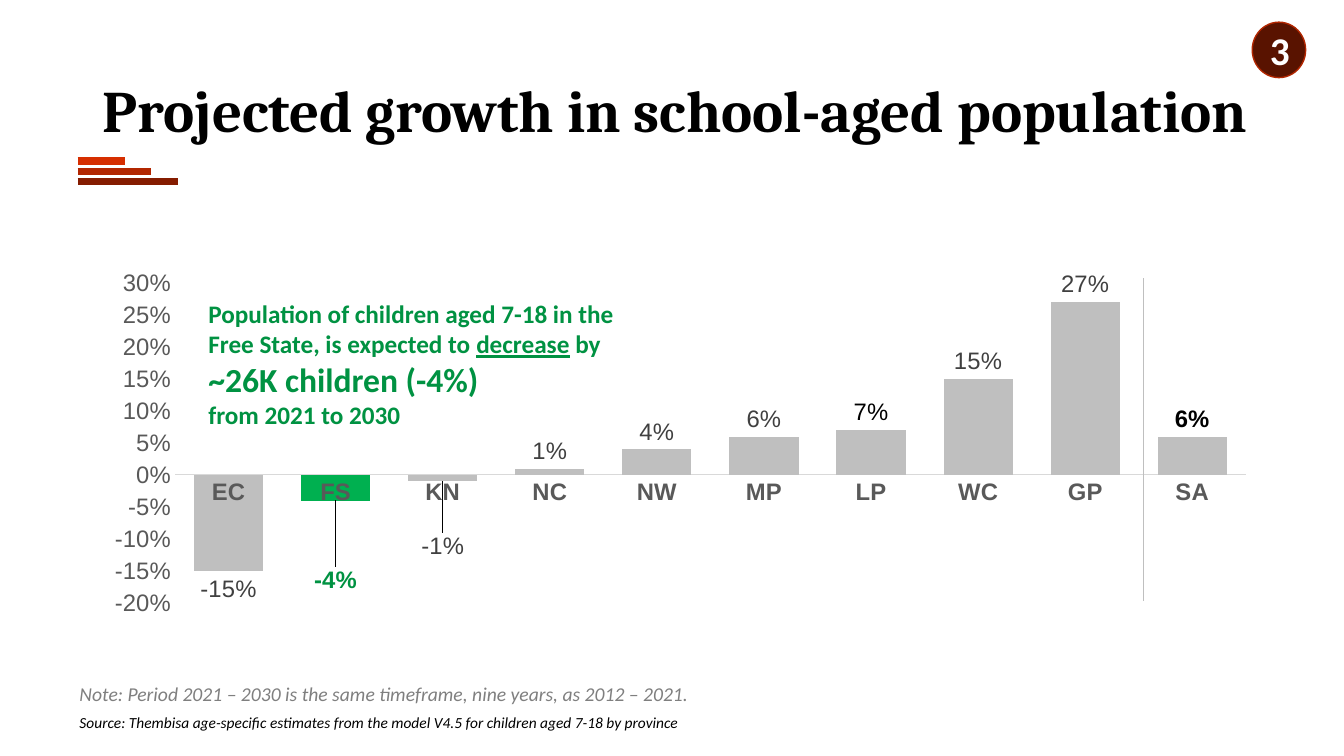
from lxml import etree
from pptx import Presentation, util as u
from pptx.chart.data import CategoryChartData
from pptx.dml.color import RGBColor
from pptx.enum import chart as ch, shapes, text
from pptx.oxml import parse_xml
from pptx.oxml.ns import nsdecls, qn

PX = 9144
WHITE = RGBColor(0xFF, 0xFF, 0xFF)
BLACK = RGBColor(0x00, 0x00, 0x00)
DARK_RED = RGBColor(0x85, 0x1C, 0x00)
RED = RGBColor(0xB2, 0x26, 0x00)
BRIGHT_RED = RGBColor(0xD6, 0x2E, 0x00)
BADGE_RED = RGBColor(0x59, 0x13, 0x00)
GREEN = RGBColor(0x00, 0xB0, 0x50)
TEXT_GREEN = RGBColor(0x00, 0x92, 0x42)
BAR_GREY = RGBColor(0xBF, 0xBF, 0xBF)
AXIS_GREY = RGBColor(0xD9, 0xD9, 0xD9)
AXIS_TEXT = RGBColor(0x59, 0x59, 0x59)
LABEL_TEXT = RGBColor(0x40, 0x40, 0x40)
NOTE_GREY = RGBColor(0x7F, 0x7F, 0x7F)

GROWTH = {"EC": -0.15, "FS": -0.04, "KN": -0.01, "NC": 0.01, "NW": 0.04,
          "MP": 0.06, "LP": 0.07, "WC": 0.15, "GP": 0.27, "SA": 0.06}
SPECIAL_LABELS = {"FS": ("-4%", TEXT_GREEN, True, 0.17),
                  "KN": ("-1%", LABEL_TEXT, False, 0.13),
                  "LP": ("7%", BLACK, False, 0),
                  "SA": ("6%", BLACK, True, 0)}


def px(*lengths):
    return [u.Emu(length * PX) for length in lengths]


def style_font(font, size, color, name="Calibri", bold=False, italic=False, underline=False):
    font.name, font.size = name, u.Pt(size)
    font.bold, font.italic, font.underline = bold, italic, underline
    font.color.rgb = color


def add_run(paragraph, words, **style):
    run = paragraph.add_run()
    run.text = words
    style_font(run.font, **style)


def add_text(slide, box, words="", preset=None, fill=None, outline=None,
             align=text.PP_ALIGN.LEFT, spacing=None, **style):
    if preset is None:
        holder = slide.shapes.add_textbox(*px(*box))
    else:
        holder = slide.shapes.add_shape(preset, *px(*box))
        holder.shadow.inherit = False
        if fill is None:
            holder.fill.background()
        else:
            holder.fill.solid()
            holder.fill.fore_color.rgb = fill
        if outline is None:
            holder.line.fill.background()
        else:
            holder.line.color.rgb = outline
            holder.line.width = u.Pt(1)
    frame = holder.text_frame
    frame.word_wrap = True
    frame.vertical_anchor = text.MSO_ANCHOR.MIDDLE
    paragraph = frame.paragraphs[0]
    paragraph.alignment = align
    paragraph.line_spacing = spacing
    if words:
        add_run(paragraph, words, **style)
    return frame


def add_line(slide, x1, y1, x2, y2, color, width):
    line = slide.shapes.add_connector(shapes.MSO_CONNECTOR.STRAIGHT, *px(x1, y1, x2, y2))
    line.line.color.rgb = color
    line.line.width = u.Pt(width)
    etree.SubElement(line._element.spPr, qn("a:effectLst"))


def add_heading(slide, left, top, width, height):
    stripes = ((100, DARK_RED), (73, RED), (47, BRIGHT_RED))
    for step, (length, color) in enumerate(stripes):
        y = top + 140 - 10 * step
        add_line(slide, left - 15, y, left - 15 + length, y, color, 5.5)
    add_text(slide, (left, top, width, height), "Projected growth in school-aged population",
             spacing=0.9, size=42, color=BLACK, name="Cambria", bold=True)
    add_text(slide, (left + width - 53, top - 18, 53, 55), "3",
             preset=shapes.MSO_SHAPE.OVAL, fill=BADGE_RED, outline=RED,
             align=text.PP_ALIGN.CENTER, size=28, color=WHITE, bold=True)


def manual_layout(**values):
    parts = "".join(f'<c:{tag} val="{value}"/>' for tag, value in values.items())
    return parse_xml(f'<c:layout {nsdecls("c")}><c:manualLayout>{parts}</c:manualLayout></c:layout>')


def place_plot(chart):
    area = chart._chartSpace.chart.plotArea
    for layout in area.findall(qn("c:layout")):
        area.remove(layout)
    area.insert(0, manual_layout(layoutTarget="inner", xMode="edge", yMode="edge",
                                 x=0.07, y=0.06, w=0.91, h=0.88))


def style_axes(chart):
    provinces, percent = chart.category_axis, chart.value_axis
    for axis in (provinces, percent):
        axis.has_major_gridlines = False
        axis.major_tick_mark = axis.minor_tick_mark = ch.XL_TICK_MARK.NONE
        style_font(axis.tick_labels.font, 17, AXIS_TEXT, "Arial", bold=axis is provinces)
    provinces.format.line.color.rgb = AXIS_GREY
    provinces.format.line.width = u.Pt(0.75)
    percent.format.line.fill.background()
    percent.minimum_scale, percent.maximum_scale, percent.major_unit = -0.2, 0.3, 0.05
    percent.tick_labels.number_format = "0%"
    percent.tick_labels.number_format_is_linked = False


def style_bars(plot):
    plot.gap_width, plot.overlap = 55, -27
    plot.vary_by_categories = False
    bars = plot.series[0]
    bars.invert_if_negative = False
    bars.format.fill.solid()
    bars.format.fill.fore_color.rgb = BAR_GREY
    provinces = list(GROWTH)
    free_state = bars.points[provinces.index("FS")].format.fill
    free_state.solid()
    free_state.fore_color.rgb = GREEN

    labels = bars.data_labels
    labels.show_value = True
    labels.position = ch.XL_LABEL_POSITION.OUTSIDE_END
    labels.number_format, labels.number_format_is_linked = "0%", False
    style_font(labels.font, 17, LABEL_TEXT, "Arial")
    for province, (words, color, bold, drop) in SPECIAL_LABELS.items():
        index = provinces.index(province)
        label = bars.points[index].data_label
        add_run(label.text_frame.paragraphs[0], words, size=17, color=color,
                name="Arial", bold=bold)
        label.position = ch.XL_LABEL_POSITION.OUTSIDE_END
        if drop:
            entry = labels._element.xpath(f'c:dLbl[c:idx/@val="{index}"]')[0]
            entry.find(qn("c:idx")).addnext(manual_layout(x=0, y=drop))


def add_growth_chart(slide, left, top, width, height):
    growth = CategoryChartData(number_format="0%")
    growth.categories = list(GROWTH)
    growth.add_series("Series 1", list(GROWTH.values()))
    chart = slide.shapes.add_chart(ch.XL_CHART_TYPE.COLUMN_CLUSTERED,
                                   *px(left, top, width, height), growth).chart
    chart.has_legend = chart.has_title = False
    style_font(chart.font, 17, BLACK, "Arial")
    place_plot(chart)
    style_axes(chart)
    style_bars(chart.plots[0])
    divider = left + 1042
    add_line(slide, divider, top + 17, divider, top + 337, BAR_GREY, 0.75)


def add_callout(slide, *box):
    frame = add_text(slide, box, preset=shapes.MSO_SHAPE.ROUNDED_RECTANGLE)
    style = dict(color=TEXT_GREEN, bold=True)
    opening = frame.paragraphs[0]
    add_run(opening, "Population of children aged 7-18 in the Free State, is expected to ",
            size=18, **style)
    add_run(opening, "decrease", size=18, underline=True, **style)
    add_run(opening, " by", size=18, **style)
    for words, size in (("~26K children (-4%)", 24), ("from 2021 to 2030", 18)):
        paragraph = frame.add_paragraph()
        paragraph.alignment = text.PP_ALIGN.LEFT
        add_run(paragraph, words, size=size, **style)


def add_footnotes(slide, left, top, width, height):
    add_text(slide, (left, top + 22, width, height - 22),
             "Source: Thembisa age-specific estimates from the model V4.5 "
             "for children aged 7-18 by province", size=11, color=BLACK, italic=True)
    add_text(slide, (left, top, width, 23),
             "Note: Period 2021 – 2030 is the same timeframe, nine years, as 2012 – 2021.",
             preset=shapes.MSO_SHAPE.RECTANGLE, fill=WHITE,
             size=14, color=NOTE_GREY, italic=True)


def main():
    deck = Presentation()
    deck.slide_width, deck.slide_height = px(1333, 750)
    slide = deck.slides.add_slide(deck.slide_layouts[6])
    add_heading(slide, 92, 40, 1203, 145)
    add_growth_chart(slide, 92, 259, 1167, 361)
    add_footnotes(slide, 69, 677, 1127, 57)
    add_callout(slide, 190, 291, 477, 140)
    deck.save("out.pptx")


if __name__ == "__main__":
    main()
